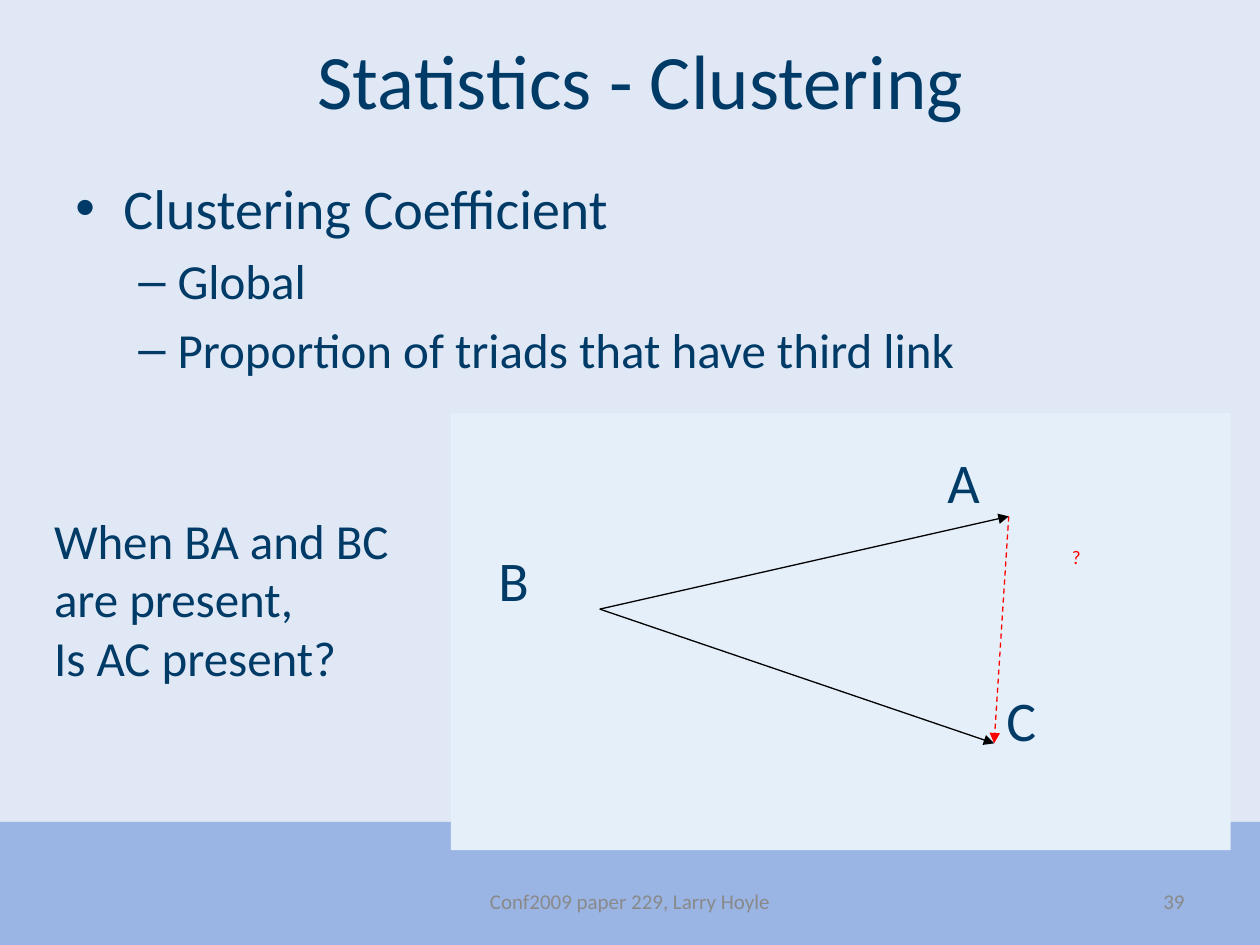
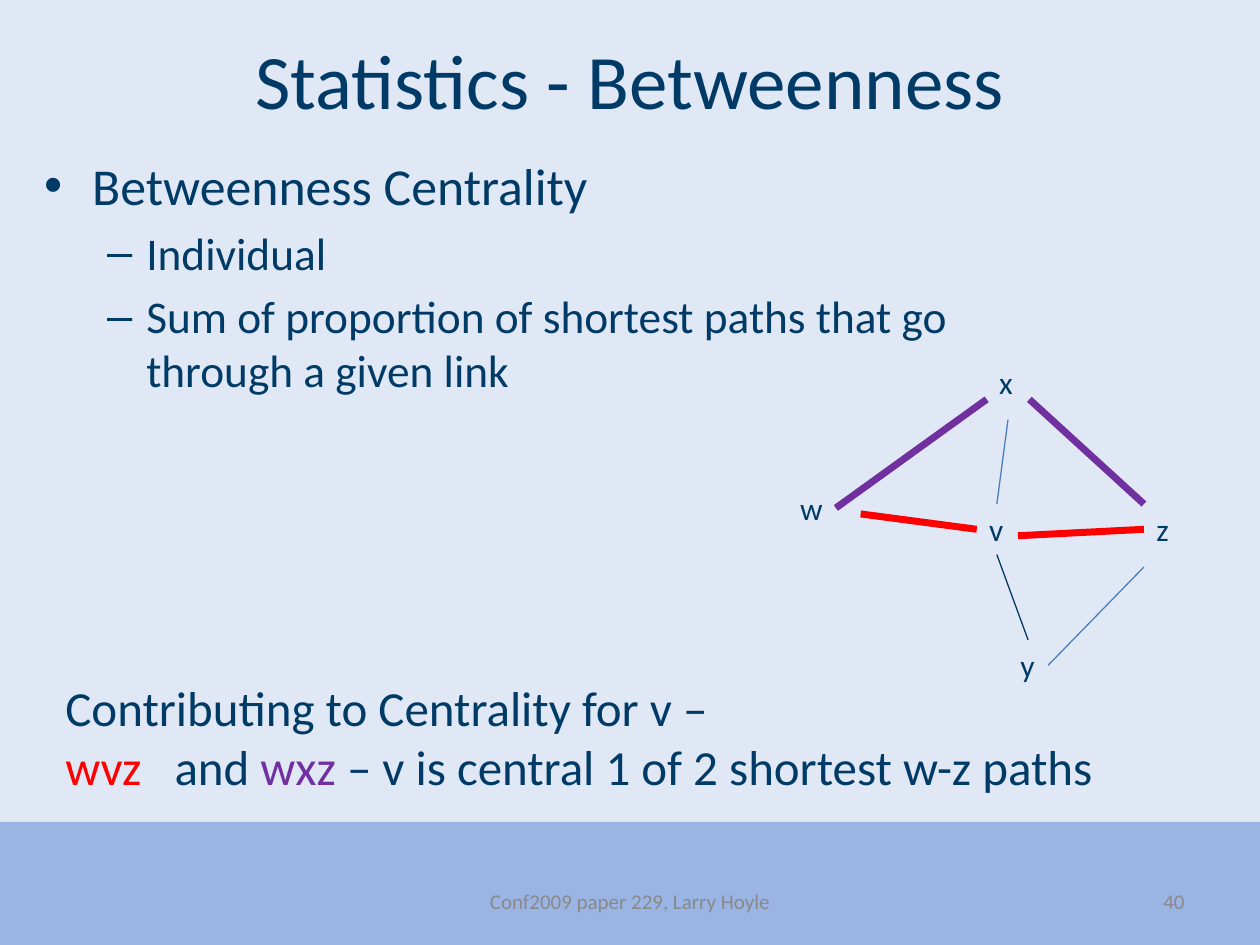
from dataclasses import dataclass

from lxml import etree
from pptx import Presentation
from pptx.dml.color import RGBColor
from pptx.enum import dml, shapes as kinds, text
from pptx.oxml import ns
from pptx.util import Cm, Pt


@dataclass(frozen=True)
class Theme:
    font: str = "Calibri"
    ink: str = "003B67"
    back: str = "E1E8F5"
    band: str = "9AB5E4"
    panel: str = "E5EFF9"
    grey: str = "898989"
    black: str = "000000"
    red: str = "FF0000"
    violet: str = "7030A0"
    blue: str = "4B7EBC"
    title: float = 44
    head: float = 32
    note: float = 28
    node: float = 18
    foot: float = 12
    mark: float = 11
    thin: float = 0.75
    thick: float = 4


T = Theme()
FOOTER = "Conf2009 paper 229, Larry Hoyle"
FIRST = 39
TOP, LEFT, BOTTOM, RIGHT = range(4)
BULLETS = (("•", 0.97, -0.97), ("–", 2.06, -0.79))


def rgb(code):
    return RGBColor.from_string(code)


def sub(parent, tag, **attrs):
    """Append a DrawingML child element."""
    node = etree.SubElement(parent, ns.qn(tag))
    for key, value in attrs.items():
        node.set(key, str(value))
    return node


def style(run, size, color=T.ink):
    font = run.font
    font.name, font.size, font.color.rgb = T.font, Pt(size), rgb(color)


def fill(frame, lines, size, color=T.ink, align=None):
    """Write one paragraph per line, all in one style."""
    for i, line in enumerate(lines):
        para = frame.paragraphs[0] if i == 0 else frame.add_paragraph()
        para.text = line
        para.alignment = align
        for run in para.runs:
            style(run, size, color)


def label(items, box, lines, size, color=T.ink, align=None, middle=False, wrap=True):
    shape = items.add_textbox(*map(Cm, box))
    frame = shape.text_frame
    frame.word_wrap = wrap
    if middle:
        frame.vertical_anchor = text.MSO_ANCHOR.MIDDLE
    fill(frame, lines, size, color, align)
    return shape


def block(items, box, color):
    shape = items.add_shape(kinds.MSO_SHAPE.RECTANGLE, *map(Cm, box))
    shape.shadow.inherit = False
    shape.fill.solid()
    shape.fill.fore_color.rgb = rgb(color)
    shape.line.fill.background()
    return shape


def card(items, box, word, size=T.head, color=T.ink):
    """A panel-coloured rectangle with its letter at the top left."""
    shape = block(items, box, T.panel)
    frame = shape.text_frame
    frame.vertical_anchor = text.MSO_ANCHOR.TOP
    fill(frame, [word], size, color, text.PP_ALIGN.LEFT)
    frame.paragraphs[0].space_after = Pt(10)
    return shape


def link(items, start, end, color, width=T.thin, arrow=False, dash=False):
    """Draw a line; each end is an (x, y) point or a (shape, side) pair."""
    def spot(stop):
        return (0, 0) if hasattr(stop[0], "shape_id") else map(Cm, stop)

    line = items.add_connector(kinds.MSO_CONNECTOR.STRAIGHT, *spot(start), *spot(end))
    for stop, join in ((start, line.begin_connect), (end, line.end_connect)):
        if hasattr(stop[0], "shape_id"):
            join(*stop)
    line.line.color.rgb = rgb(color)
    line.line.width = Pt(width)
    if dash:
        line.line.dash_style = dml.MSO_LINE.DASH
    props = line._element.spPr
    if arrow:
        sub(props.find(ns.qn("a:ln")), "a:tailEnd", type="triangle")
    sub(props, "a:effectLst")


def outline(slide, box, rows, sizes):
    """Bulleted text from (level, words) rows; sizes go by level."""
    frame = label(slide.shapes, box, [words for _, words in rows], sizes[0]).text_frame
    for para, (level, _) in zip(frame.paragraphs, rows):
        char, left, hang = BULLETS[level]
        para.level = level
        para.space_before = Pt(round(sizes[level] * 0.2, 1))
        for run in para.runs:
            run.font.size = Pt(sizes[level])
        props = para._p.get_or_add_pPr()
        props.set("marL", str(Cm(left)))
        props.set("indent", str(Cm(hang)))
        sub(props, "a:buFont", typeface="Arial")
        sub(props, "a:buChar", char=char)


def number(slide, value):
    box = label(slide.shapes, (18.2, 17.66, 5.93, 1.01), [str(value)], T.foot,
                T.grey, text.PP_ALIGN.RIGHT, middle=True)
    run = box.text_frame.paragraphs[0].runs[0]._r
    field = etree.Element(ns.qn("a:fld"), type="slidenum",
                          id="{B6F15528-21DE-4FAA-801E-634DDDAF4B2B}")
    run.getparent().replace(run, field)
    field.extend(list(run))


def base(deck, title, width):
    """Add a slide with the shared backdrop, title and footer."""
    slide = deck.slides.add_slide(deck.slide_layouts[6])
    slide.background.fill.solid()
    slide.background.fill.fore_color.rgb = rgb(T.back)
    block(slide.shapes, (0, 16.57, 25.4, 2.48), T.band)
    mid = text.PP_ALIGN.CENTER
    label(slide.shapes, (1.27, 0, width, 3.18), [title], T.title, align=mid, middle=True)
    label(slide.shapes, (8.68, 17.66, 8.04, 1.01), [FOOTER], T.foot, T.grey, mid, True)
    number(slide, FIRST + len(deck.slides) - 1)
    return slide


def cluster(deck):
    slide = base(deck, "Statistics - Clustering", 23.29)
    outline(slide, (1.27, 3.38, 18.62, 5.28),
            [(0, "Clustering Coefficient"), (1, "Global"),
             (1, "Proportion of triads that have third link")], (T.head, T.note))
    items = slide.shapes.add_group_shape().shapes
    block(items, (9.09, 8.33, 15.72, 8.81), T.panel)
    b = card(items, (9.8, 10.87, 2.29, 2.82), "B")
    a = card(items, (18.85, 8.89, 2.97, 1.52), "A")
    c = card(items, (20.04, 13.69, 2.39, 2.59), "C")
    link(items, (b, RIGHT), (a, BOTTOM), T.black, arrow=True)
    link(items, (b, RIGHT), (c, LEFT), T.black, arrow=True)
    link(items, (a, BOTTOM), (c, LEFT), T.red, arrow=True, dash=True)
    card(items, (21.36, 10.87, 2.29, 2.82), "?", T.mark, T.red)
    label(slide.shapes, (0.84, 10.16, 7.62, 3.84),
          ["When BA and BC are present,", "Is AC present?"], T.note)


def between(deck):
    slide = base(deck, "Statistics - Betweenness", 22.86)
    outline(slide, (0.64, 2.97, 21.39, 5.08),
            [(0, "Betweenness Centrality"), (1, "Individual"),
             (1, "Sum of proportion of shortest paths that go through a given link")],
            (29.6, 25.9))
    items = slide.shapes.add_group_shape().shapes
    spots = {"w": (15.88, 9.73, 0.97), "x": (19.89, 7.19, 0.79),
             "v": (19.69, 10.16, 0.81), "y": (20.32, 12.9, 0.81),
             "z": (23.06, 10.16, 0.76)}
    w, x, v, y, z = [label(items, (*spot, 1.02), [name], T.node, wrap=False)
                     for name, spot in spots.items()]
    link(items, (w, RIGHT), (19.89, 8.05), T.violet, T.thick)
    link(items, (20.32, 8.46), (v, TOP), T.blue)
    link(items, (v, BOTTOM), (y, TOP), T.ink)
    link(items, (20.52, 10.8), (z, LEFT), T.red, T.thick)
    link(items, (20.75, 8.05), (23.06, 10.16), T.violet, T.thick)
    link(items, (y, RIGHT), (23.06, 11.43), T.blue)
    link(items, (17.35, 10.36), (v, LEFT), T.red, T.thick)

    note = label(slide.shapes, (1.07, 13.54, 21.79, 2.64),
                 ["Contributing to Centrality for v –"], T.note)
    para = note.text_frame.add_paragraph()
    for words, color in (("wvz", T.red), ("\tand ", T.ink), ("wxz", T.violet),
                         (" – v is central 1 of 2 shortest w-z paths", T.ink)):
        run = para.add_run()
        run.text = words
        style(run, T.note, color)
    tabs = sub(para._p.get_or_add_pPr(), "a:tabLst")
    sub(tabs, "a:tab", pos=Cm(2.2), algn="l")


def main():
    deck = Presentation()
    deck.slide_width, deck.slide_height = Cm(25.4), Cm(19.05)
    deck.element.set("firstSlideNum", str(FIRST))
    cluster(deck)
    between(deck)
    deck.save("out.pptx")


if __name__ == "__main__":
    main()
